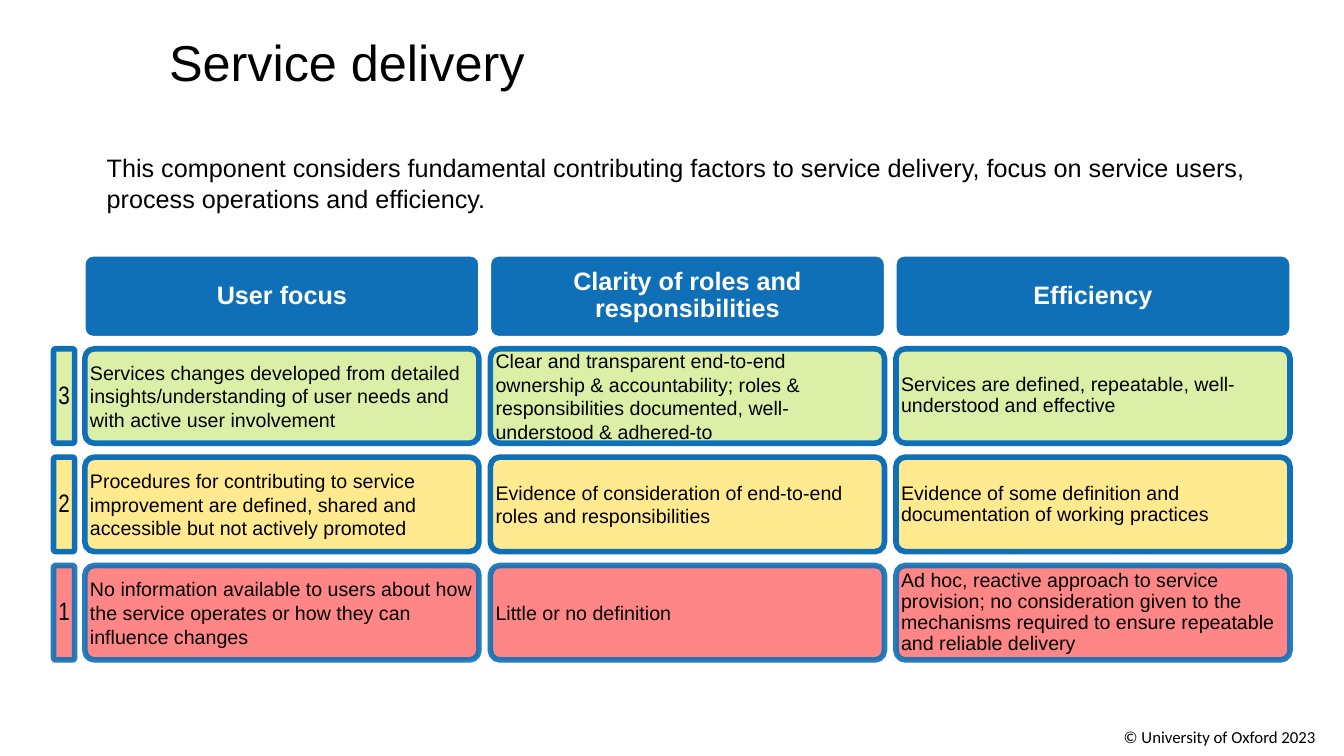
"""Build the service delivery maturity grid slide."""
from lxml import etree
from pptx import Presentation
from pptx import util as u
from pptx.dml.color import RGBColor
from pptx.enum import shapes, text
from pptx.oxml import ns

BLACK = RGBColor(0x00, 0x00, 0x00)
WHITE = RGBColor(0xFF, 0xFF, 0xFF)
BLUE = RGBColor(0x0F, 0x70, 0xB7)
GREEN = RGBColor(0xD8, 0xEE, 0x9E)
YELLOW = RGBColor(0xFF, 0xE8, 0x85)
RED = RGBColor(0xFF, 0x79, 0x79)


def write(shape, wording, size=14, font="Arial", color=BLACK, bold=False, wrap=True,
          align=text.PP_ALIGN.LEFT, anchor=text.MSO_ANCHOR.MIDDLE, spacing=1.0, inset=None):
    frame = shape.text_frame
    frame.word_wrap = wrap
    frame.vertical_anchor = anchor
    if inset is not None:
        frame.margin_left = frame.margin_right = u.Cm(inset)
        frame.margin_top = frame.margin_bottom = u.Cm(inset)
    paragraph = frame.paragraphs[0]
    paragraph.text = wording
    paragraph.alignment = align
    paragraph.line_spacing = spacing
    paragraph.font.size = u.Pt(size)
    paragraph.font.name = font
    paragraph.font.bold = bold
    paragraph.font.color.rgb = color


def add_box(left, top, width, height, fill, line, weight, clear_fill=False, clear_line=False):
    shape = slide.shapes.add_shape(shapes.MSO_SHAPE.ROUNDED_RECTANGLE,
                                   u.Cm(left), u.Cm(top), u.Cm(width), u.Cm(height))
    shape.adjustments[0] = 0.1
    shape.shadow.inherit = False
    shape.fill.solid()
    shape.fill.fore_color.rgb = fill
    shape.line.color.rgb = line
    shape.line.width = u.Pt(weight)
    properties = shape.element.spPr
    for parent, clear in ((properties, clear_fill), (properties.find(ns.qn("a:ln")), clear_line)):
        if clear:
            color = parent.find(ns.qn("a:solidFill"))[0]
            etree.SubElement(color, ns.qn("a:alpha")).set("val", "90000")
    return shape


presentation = Presentation()
presentation.slide_width = u.Cm(33.87)
presentation.slide_height = u.Cm(19.05)
slide = presentation.slides.add_slide(presentation.slide_layouts[6])

LEVELS = [("3", GREEN), ("2", YELLOW), ("1", RED)]
COLUMNS = [
    ("User focus", 1.0, [
        "Services changes developed from detailed insights/understanding of user needs "
        "and with active user involvement",
        "Procedures for contributing to service improvement are defined, shared and "
        "accessible but not actively promoted",
        "No information available to users about how the service operates or how they "
        "can influence changes"]),
    ("Clarity of roles and responsibilities", 1.0, [
        "Clear and transparent end-to-end ownership & accountability; roles & "
        "responsibilities documented, well-understood & adhered-to",
        "Evidence of consideration of end-to-end roles and responsibilities",
        "Little or no definition"]),
    ("Efficiency", 0.9, [
        "Services are defined, repeatable, well-understood and effective",
        "Evidence of some definition and documentation of working practices",
        "Ad hoc, reactive approach to service provision; no consideration given to the "
        "mechanisms required to ensure repeatable and reliable delivery"]),
]
GRID_LEFT, COLUMN_PITCH, COLUMN_WIDTH = 2.14, 10.22, 9.93
GRID_TOP, ROW_PITCH, ROW_HEIGHT = 8.79, 2.73, 2.38

footer = slide.shapes.add_textbox(u.Cm(28.07), u.Cm(18.19), u.Cm(5.82), u.Cm(0.76))
write(footer, "© University of Oxford 2023", size=12, font="Calibri", wrap=False,
      anchor=text.MSO_ANCHOR.TOP)

introduction = slide.shapes.add_textbox(u.Cm(2.44), u.Cm(3.71), u.Cm(30.07), u.Cm(1.8))
write(introduction, "This component considers fundamental contributing factors to service "
      "delivery, focus on service users, process operations and efficiency.", size=18)

for row, (level, tint) in enumerate(LEVELS):
    marker = add_box(1.35, GRID_TOP + row * ROW_PITCH, 0.53, ROW_HEIGHT, tint, BLUE, 4,
                     clear_fill=True, clear_line=tint == RED)
    write(marker, level, size=18, font="Arial Narrow", spacing=0.9, inset=0.11)

for column, (heading, spacing, descriptions) in enumerate(COLUMNS):
    left = GRID_LEFT + column * COLUMN_PITCH
    header = add_box(left, 6.45, COLUMN_WIDTH, 2.03, BLUE, WHITE, 1)
    write(header, heading, size=18, color=WHITE, bold=True, spacing=0.9, inset=0.06,
          align=text.PP_ALIGN.CENTER)
    for row, (description, (level, tint)) in enumerate(zip(descriptions, LEVELS)):
        cell = add_box(left, GRID_TOP + row * ROW_PITCH, COLUMN_WIDTH, ROW_HEIGHT, tint, BLUE, 4,
                       clear_fill=True, clear_line=tint == RED)
        write(cell, description, spacing=spacing, inset=0.06)

title = slide.shapes.add_textbox(u.Cm(4.01), u.Cm(0.66), u.Cm(22.86), u.Cm(1.8))
write(title, "Service delivery", size=36, anchor=text.MSO_ANCHOR.TOP)

presentation.save("out.pptx")
